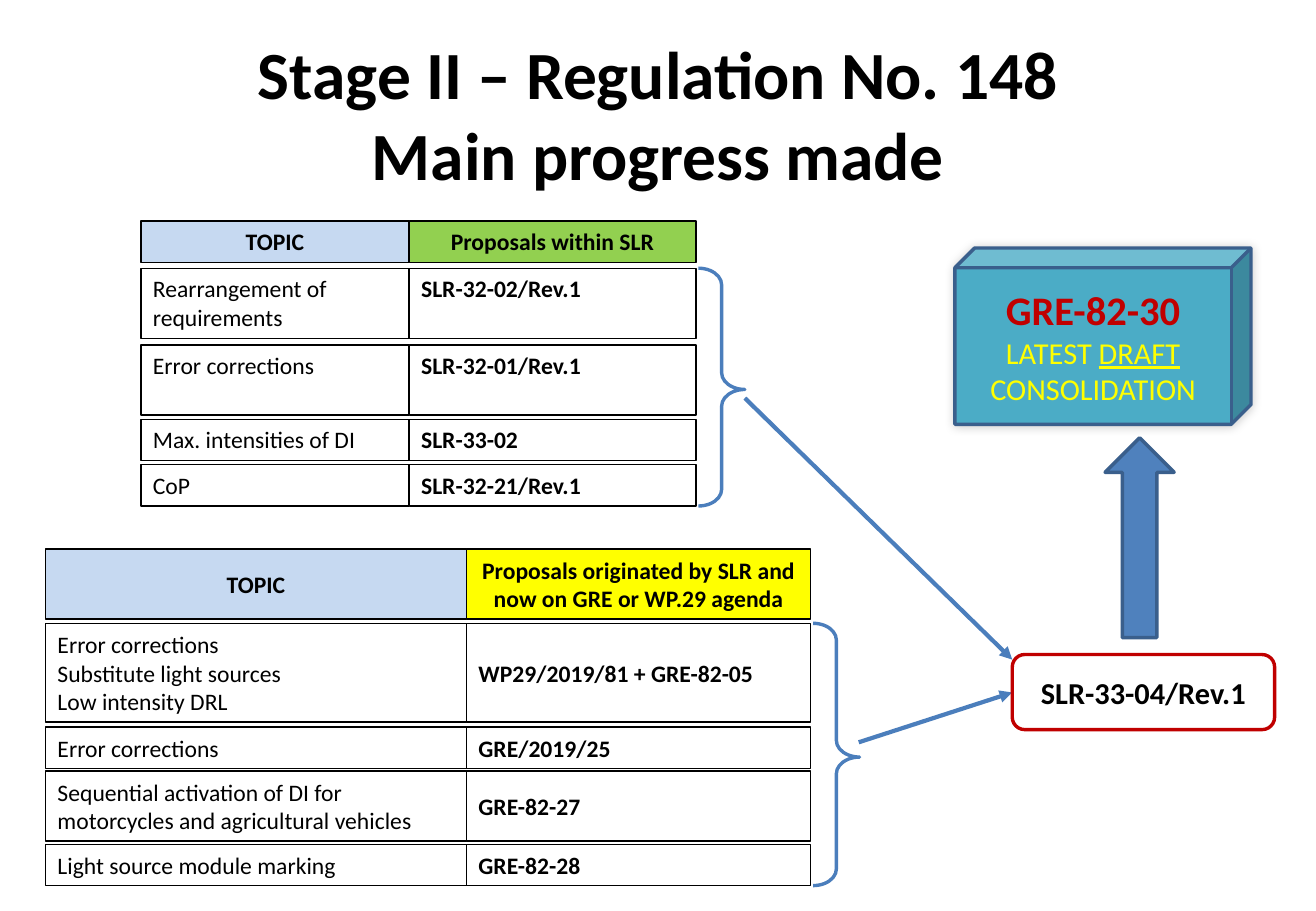
from lxml.etree import SubElement
from pptx import Presentation
from pptx.dml.color import RGBColor
from pptx.enum.shapes import MSO_CONNECTOR as Connector, MSO_SHAPE as Shape
from pptx.enum.text import MSO_ANCHOR as Anchor, PP_ALIGN as Align
from pptx.oxml.ns import qn
from pptx.util import Pt

# Content: each run is (text, format), each row is (top, lines, topic, proposal)
TITLE = ["Stage II – Regulation No. 148", "Main progress made"]
SLR_TABLE = {
    "left": 83.5, "widths": (159, 170), "header_fill": "green", "anchor": Anchor.TOP,
    "rows": [
        (131, 1, ["TOPIC"], ["Proposals within SLR"]),
        (159, 2, ["Rearrangement of requirements"], ["SLR-32-02/Rev.1"]),
        (204.5, 2, ["Error corrections"], ["SLR-32-01/Rev.1"]),
        (248.5, 1, ["Max. intensities of DI"], ["SLR-33-02"]),
        (275.5, 1, ["CoP"], ["SLR-32-21/Rev.1"]),
    ],
}
AGENDA_TABLE = {
    "left": 27, "widths": (249.5, 204), "header_fill": "yellow", "anchor": Anchor.MIDDLE,
    "rows": [
        (325.5, 2, ["TOPIC"], ["Proposals originated by SLR and now on GRE or WP.29 agenda"]),
        (369.5, 3, ["Error corrections", "Substitute light sources", "Low intensity DRL"],
         ["WP29/2019/81 + GRE-82-05"]),
        (431, 1, ["Error corrections"], ["GRE/2019/25"]),
        (457, 2, ["Sequential activation of DI for motorcycles and agricultural vehicles"],
         ["GRE-82-27"]),
        (500.5, 1, ["Light source module marking"], ["GRE-82-28"]),
    ],
}
DRAFT_NAME = "GRE-82-30"
DRAFT_NOTE = [("LATEST ", False), ("DRAFT", True), (" CONSOLIDATION", False)]
REVISION = "SLR-33-04/Rev.1"

THEME = {
    "font": "Calibri",
    "sizes": {"title": 40, "draft": 24, "box": 18, "cell": 14},
    "colors": {
        "black": "000000", "pale_blue": "C6D9F1", "green": "92D050", "yellow": "FFFF00",
        "teal": "4BACC6", "blue": "4F81BD", "outline": "3A5F8C", "link": "4B7EBC",
        "red": "C00000",
    },
}


def color(name):
    return RGBColor.from_string(THEME["colors"][name])


def add_run(paragraph, text, size, color_name="black", **formats):
    run = paragraph.add_run()
    run.text = text
    values = {"name": THEME["font"], "size": Pt(THEME["sizes"][size]), **formats}
    for key, value in values.items():
        setattr(run.font, key, value)
    run.font.color.rgb = color(color_name)


def write_lines(shape, lines, size, align=Align.LEFT, bold=False):
    frame = shape.text_frame
    for index, line in enumerate(lines):
        paragraph = frame.add_paragraph() if index else frame.paragraphs[0]
        paragraph.alignment = align
        add_run(paragraph, line, size, bold=bold)


def add_shape(slide, kind, box, fill=None, line="black", width=0.75, adjustments=()):
    shape = slide.shapes.add_shape(kind, *map(Pt, box))
    shape.shadow.inherit = False
    if fill:
        shape.fill.solid()
        shape.fill.fore_color.rgb = color(fill)
    else:
        shape.fill.background()
    shape.line.color.rgb = color(line)
    shape.line.width = Pt(width)
    for index, value in enumerate(adjustments):
        shape.adjustments[index] = value
    shape.text_frame.word_wrap = True
    return shape


def row_height(lines):
    return 7.5 + 17 * lines


def add_topic_rows(slide, table):
    """Draw the spaced rows of cells, then the brace that gathers them."""
    for index, (top, lines, *cells) in enumerate(table["rows"]):
        header = index == 0
        left = table["left"]
        fills = ("pale_blue", table["header_fill"]) if header else (None, None)
        for column, text in enumerate(cells):
            width = table["widths"][column]
            cell = add_shape(slide, Shape.RECTANGLE, (left, top, width, row_height(lines)),
                             fills[column])
            cell.text_frame.vertical_anchor = table["anchor"]
            write_lines(cell, text, "cell", Align.CENTER if header else Align.LEFT,
                        bold=header or column == 1)
            left += width
    first_top = table["rows"][1][0]
    last_top, last_lines = table["rows"][-1][:2]
    height = last_top + row_height(last_lines) - first_top
    add_shape(slide, Shape.RIGHT_BRACE, (left + 1.5, first_top, 27.5, height),
              line="link", width=2, adjustments=(0.36, 0.51))


def add_arrow(slide, start, end):
    arrow = slide.shapes.add_connector(Connector.STRAIGHT, *map(Pt, start + end))
    arrow.line.color.rgb = color("link")
    arrow.line.width = Pt(2.5)
    properties = arrow._element.spPr
    SubElement(properties.find(qn("a:ln")), qn("a:tailEnd"), type="triangle")
    SubElement(properties, qn("a:effectLst"))


def add_soft_shadow(shape):
    effects = shape._element.spPr.find(qn("a:effectLst"))
    shadow = SubElement(effects, qn("a:outerShdw"), blurRad=str(Pt(6)), dist="0",
                        dir=str(315 * 60000), rotWithShape="0")
    black = SubElement(shadow, qn("a:srgbClr"), val=THEME["colors"]["black"])
    SubElement(black, qn("a:alpha"), val="20000")


def main():
    presentation = Presentation()
    presentation.slide_width, presentation.slide_height = Pt(780), Pt(540)
    slide = presentation.slides.add_slide(presentation.slide_layouts[5])

    # Title
    title = slide.shapes.title
    for key, value in {"left": 39, "top": 15, "width": 702, "height": 104.5}.items():
        setattr(title, key, Pt(value))
    write_lines(title, TITLE, "title", Align.CENTER, bold=True)

    # Topics and proposals
    for table in (SLR_TABLE, AGENDA_TABLE):
        add_topic_rows(slide, table)

    # Latest draft
    cube = add_shape(slide, Shape.CUBE, (566, 147, 175.5, 104.5), "teal", "outline", 2, (0.112,))
    add_soft_shadow(cube)
    cube.text_frame.vertical_anchor = Anchor.MIDDLE
    name = cube.text_frame.paragraphs[0]
    note = cube.text_frame.add_paragraph()
    name.alignment = note.alignment = Align.CENTER
    add_run(name, DRAFT_NAME, "draft", "red", bold=True)
    for text, underline in DRAFT_NOTE:
        add_run(note, text, "box", "yellow", underline=underline)

    # Flow from the proposals to the revision and on to the draft
    add_shape(slide, Shape.UP_ARROW, (655, 259.5, 41, 118.5), "blue", "outline", 2, (0.5, 0.5))
    add_arrow(slide, (441.5, 236), (600, 391))
    add_arrow(slide, (509, 440), (600, 410.5))
    revision = add_shape(slide, Shape.ROUNDED_RECTANGLE, (600, 388, 155.5, 44.5),
                         line="red", width=2)
    revision.text_frame.vertical_anchor = Anchor.MIDDLE
    write_lines(revision, [REVISION], "box", Align.CENTER, bold=True)

    presentation.save("out.pptx")


if __name__ == "__main__":
    main()
